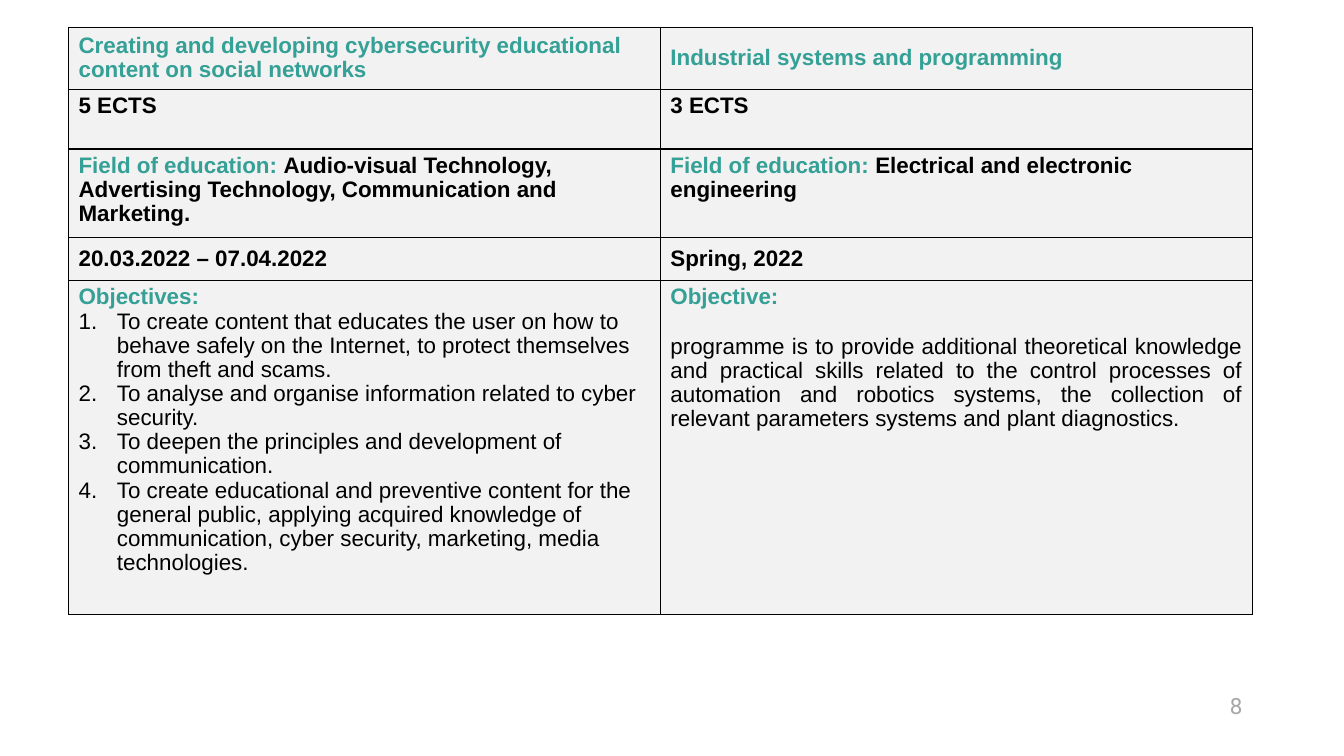
from dataclasses import dataclass

from lxml import etree
from pptx import Presentation
from pptx import util as u
from pptx.dml.color import RGBColor
from pptx.enum import text
from pptx.oxml.ns import qn

TOP, MIDDLE = text.MSO_ANCHOR.TOP, text.MSO_ANCHOR.MIDDLE

COURSES = [
    {
        "title": "Creating and developing cybersecurity educational content on social networks",
        "credits": "5 ECTS",
        "field": "Audio-visual Technology, Advertising Technology, Communication and Marketing.",
        "dates": "20.03.2022 – 07.04.2022",
        "heading": "Objectives:",
        "numbered": True,
        "goals": [
            "To create content that educates the user on how to behave safely on the Internet, to protect themselves from theft and scams.",
            "To analyse and organise information related to cyber security.",
            "To deepen the principles and development of communication.",
            "To create educational and preventive content for the general public, applying acquired knowledge of communication, cyber security, marketing, media technologies.",
        ],
    },
    {
        "title": "Industrial systems and programming",
        "credits": "3 ECTS",
        "field": "Electrical and electronic engineering",
        "dates": "Spring, 2022",
        "heading": "Objective:",
        "numbered": False,
        "goals": [
            "programme is to provide additional theoretical knowledge and practical skills related to the control processes of automation and robotics systems, the collection of relevant parameters systems and plant diagnostics.",
        ],
    },
]
FIELD_LABEL = "Field of education: "
PAGE_NUMBER = "8"

SLIDE_WIDTH, SLIDE_HEIGHT = 13.33, 7.5
TABLE_LEFT, TABLE_TOP = 0.68, 0.27
COLUMN_WIDTH = 5.87
ROW_HEIGHTS = [0.59, 0.59, 0.84, 0.43, 3.31]
ROW_ANCHORS = [MIDDLE, TOP, TOP, MIDDLE, TOP]


@dataclass(frozen=True)
class Theme:
    font: str = "Arial"
    number_font: str = "Roboto"
    size: int = 16
    line_spacing: float = 0.97
    accent: str = "34A096"
    ink: str = "000000"
    panel: str = "F2F2F2"
    muted: str = "A6A6A6"
    border: int = 1
    indent: float = 0.38


THEME = Theme()


def add_run(paragraph, wording, color, bold=True, font=THEME.font):
    run = paragraph.add_run()
    run.text = wording
    run.font.name = font
    run.font.size = u.Pt(THEME.size)
    run.font.bold = bold
    run.font.color.rgb = RGBColor.from_string(color)


def number_paragraph(paragraph):
    properties = paragraph._p.get_or_add_pPr()
    properties.set("marL", str(u.Inches(THEME.indent)))
    properties.set("indent", str(-u.Inches(THEME.indent)))
    color = etree.SubElement(properties, qn("a:buClr"))
    etree.SubElement(color, qn("a:srgbClr"), val=THEME.ink)
    etree.SubElement(properties, qn("a:buFont"), typeface="+mj-lt")
    etree.SubElement(properties, qn("a:buAutoNum"), type="arabicPeriod")


def style_cell(cell, anchor):
    cell.vertical_anchor = anchor
    properties = cell._tc.get_or_add_tcPr()
    for side in ("a:lnL", "a:lnR", "a:lnT", "a:lnB"):
        line = etree.SubElement(properties, qn(side), w=str(u.Pt(THEME.border)))
        fill = etree.SubElement(line, qn("a:solidFill"))
        etree.SubElement(fill, qn("a:srgbClr"), val=THEME.ink)
    cell.fill.solid()
    cell.fill.fore_color.rgb = RGBColor.from_string(THEME.panel)


def course_rows(course):
    return [
        [(course["title"], THEME.accent)],
        [(course["credits"], THEME.ink)],
        [(FIELD_LABEL, THEME.accent), (course["field"], THEME.ink)],
        [(course["dates"], THEME.ink)],
        [(course["heading"], THEME.accent)],
    ]


def add_goals(frame, course):
    for goal in course["goals"]:
        paragraph = frame.add_paragraph()
        if course["numbered"]:
            number_paragraph(paragraph)
        else:
            paragraph.alignment = text.PP_ALIGN.JUSTIFY
            paragraph.space_before = u.Pt(18)
        add_run(paragraph, goal, THEME.ink, bold=False)


def add_course_table(slide):
    table = slide.shapes.add_table(
        len(ROW_HEIGHTS), len(COURSES),
        u.Inches(TABLE_LEFT), u.Inches(TABLE_TOP),
        u.Inches(COLUMN_WIDTH * len(COURSES)), u.Inches(sum(ROW_HEIGHTS)),
    ).table
    table.first_row = table.horz_banding = False
    for row, height in zip(table.rows, ROW_HEIGHTS):
        row.height = u.Inches(height)
    for column, course in enumerate(COURSES):
        table.columns[column].width = u.Inches(COLUMN_WIDTH)
        for row, runs in enumerate(course_rows(course)):
            cell = table.cell(row, column)
            style_cell(cell, ROW_ANCHORS[row])
            for wording, color in runs:
                add_run(cell.text_frame.paragraphs[0], wording, color)
        add_goals(cell.text_frame, course)
    for cell in table.iter_cells():
        for paragraph in cell.text_frame.paragraphs:
            paragraph.line_spacing = THEME.line_spacing


def add_page_number(slide):
    box = slide.shapes.add_textbox(u.Inches(9.42), u.Inches(6.8), u.Inches(3), u.Inches(0.4))
    frame = box.text_frame
    frame.word_wrap = True
    frame.vertical_anchor = MIDDLE
    paragraph = frame.paragraphs[0]
    paragraph.alignment = text.PP_ALIGN.RIGHT
    add_run(paragraph, PAGE_NUMBER, THEME.muted, bold=False, font=THEME.number_font)


def main():
    presentation = Presentation()
    presentation.slide_width = u.Inches(SLIDE_WIDTH)
    presentation.slide_height = u.Inches(SLIDE_HEIGHT)
    slide = presentation.slides.add_slide(presentation.slide_layouts[6])
    add_page_number(slide)
    add_course_table(slide)
    presentation.save("out.pptx")


if __name__ == "__main__":
    main()
